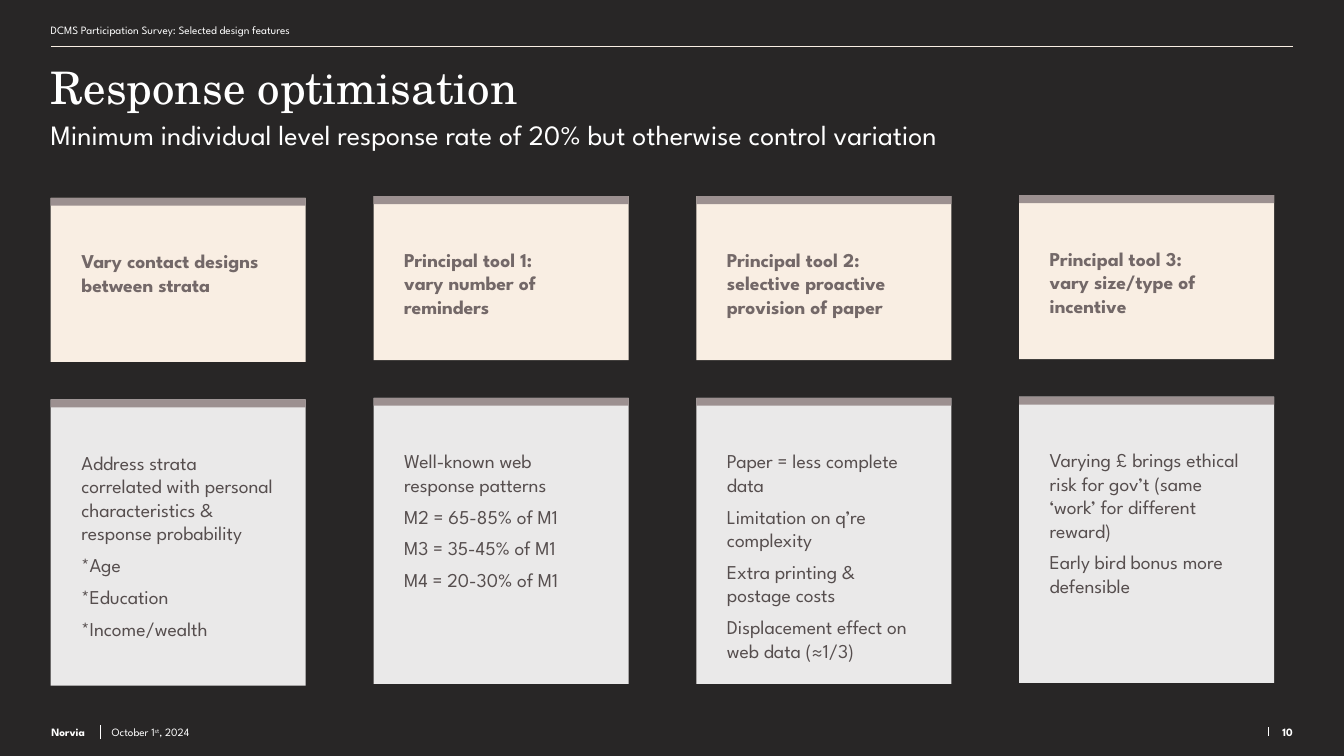
from lxml import etree
from pptx import Presentation
from pptx.dml.color import RGBColor
from pptx.enum.shapes import MSO_CONNECTOR, MSO_SHAPE
from pptx.enum.text import MSO_ANCHOR, PP_ALIGN
from pptx.oxml.ns import qn
from pptx.util import Cm, Pt

RECTANGLE = MSO_SHAPE.RECTANGLE
STRAIGHT = MSO_CONNECTOR.STRAIGHT
TOP, MIDDLE, BOTTOM = MSO_ANCHOR.TOP, MSO_ANCHOR.MIDDLE, MSO_ANCHOR.BOTTOM
LEFT, RIGHT = PP_ALIGN.LEFT, PP_ALIGN.RIGHT

CHARCOAL = RGBColor(0x28, 0x26, 0x26)
WHITE = RGBColor(0xFF, 0xFF, 0xFF)
CREAM = RGBColor(0xF9, 0xEE, 0xE3)
PALE_GREY = RGBColor(0xEA, 0xE9, 0xE9)
TAUPE = RGBColor(0x9C, 0x90, 0x90)
HEADING_BROWN = RGBColor(0x73, 0x68, 0x68)
BODY_BROWN = RGBColor(0x56, 0x4E, 0x4E)

SANS = "League Spartan"
SERIF = "TeX Gyre Schola"

MARGIN = 0.96
CONTENT_WIDTH = 23.47
FOOTER_TOP, FOOTER_HEIGHT = 13.64, 0.33
COLUMN_PITCH, CARD_WIDTH = 6.1, 4.82
HEADING_HEIGHT, BODY_HEIGHT, BAR_HEIGHT = 3.1, 5.41, 0.15
BODY_OFFSET = 3.81
CARD_INSETS = (0.58, 0.97, 0.58, 0.58)

# Top edge, heading paragraphs, body paragraphs
COLUMNS = [
    (3.74, ["Vary contact designs between strata"],
     ["Address strata correlated with personal characteristics & response probability",
      "*Age", "*Education", "*Income/wealth"]),
    (3.71, ["Principal tool 1:", "vary number of reminders"],
     ["Well-known web response patterns",
      "M2 = 65-85% of M1", "M3 = 35-45% of M1", "M4 = 20-30% of M1"]),
    (3.71, ["Principal tool 2:", "selective proactive provision of paper"],
     ["Paper = less complete data", "Limitation on q’re complexity",
      "Extra printing & postage costs", "Displacement effect on web data (≈1/3)"]),
    (3.69, ["Principal tool 3:", "vary size/type of incentive"],
     ["Varying £ brings ethical risk for gov’t (same ‘work’ for different reward)",
      "Early bird bonus more defensible"]),
]


class SlideBuilder:
    def __init__(self, slide):
        self.slide = slide
        slide.background.fill.solid()
        slide.background.fill.fore_color.rgb = CHARCOAL

    def set_text(self, shape, paragraphs, size, color=WHITE, font=SANS, bold=False,
                 anchor=TOP, align=LEFT, insets=(0, 0, 0, 0), space_after=0):
        """Fill a shape; each paragraph is a list of (text, is_superscript) runs."""
        frame = shape.text_frame
        frame.word_wrap = True
        frame.vertical_anchor = anchor
        (frame.margin_left, frame.margin_top,
         frame.margin_right, frame.margin_bottom) = map(Cm, insets)
        for index, runs in enumerate(paragraphs):
            paragraph = frame.add_paragraph() if index else frame.paragraphs[0]
            paragraph.alignment = align
            paragraph.space_after = Pt(space_after)
            for text, superscript in runs:
                run = paragraph.add_run()
                run.text = text
                run.font.name = font
                run.font.size = Pt(size)
                run.font.bold = bold
                run.font.color.rgb = color
                if superscript:
                    run.font._element.set("baseline", "30000")

    def text(self, left, top, width, height, runs, size, **style):
        box = self.slide.shapes.add_textbox(Cm(left), Cm(top), Cm(width), Cm(height))
        self.set_text(box, [runs], size, **style)

    def line(self, x1, y1, x2, y2, color):
        rule = self.slide.shapes.add_connector(STRAIGHT, Cm(x1), Cm(y1), Cm(x2), Cm(y2))
        rule.line.color.rgb = color
        rule.line.width = Pt(0.5)
        etree.SubElement(rule._element.spPr, qn("a:effectLst"))

    def block(self, group, left, top, height, color):
        rectangle = group.shapes.add_shape(
            RECTANGLE, Cm(left), Cm(top), Cm(CARD_WIDTH), Cm(height))
        rectangle.shadow.inherit = False
        rectangle.fill.solid()
        rectangle.fill.fore_color.rgb = color
        rectangle.line.fill.background()
        return rectangle

    def card(self, left, top, height, fill, paragraphs, **style):
        """Add a text panel grouped with the bar along its top edge."""
        group = self.slide.shapes.add_group_shape()
        panel = self.block(group, left, top, height, fill)
        self.set_text(panel, [[(text, False)] for text in paragraphs], 10.5,
                      insets=CARD_INSETS, **style)
        self.block(group, left, top, BAR_HEIGHT, TAUPE)


def main():
    presentation = Presentation()
    presentation.slide_width = Cm(25.4)
    presentation.slide_height = Cm(14.29)
    builder = SlideBuilder(presentation.slides.add_slide(presentation.slide_layouts[6]))

    builder.line(MARGIN, 0.87, MARGIN + CONTENT_WIDTH, 0.87, CREAM)
    builder.text(MARGIN, 0.36, CONTENT_WIDTH, 0.41,
                 [("DCMS Participation Survey: Selected design features", False)], 6,
                 anchor=MIDDLE, insets=(0, 0.1, 0, 0.1), space_after=4.5)
    builder.text(MARGIN, 0.87, CONTENT_WIDTH, 1.35, [("Response optimisation", False)], 24,
                 font=SERIF, insets=(0, 0.25, 0, 0))
    builder.text(MARGIN, 2.22, 20.37, 0.89,
                 [("Minimum individual level response rate of 20% "
                   "but otherwise control variation", False)], 15)

    for index, (top, heading, body) in enumerate(COLUMNS):
        left = MARGIN + index * COLUMN_PITCH
        builder.card(left, top, HEADING_HEIGHT, CREAM, heading,
                     color=HEADING_BROWN, bold=True)
        builder.card(left, top + BODY_OFFSET, BODY_HEIGHT, PALE_GREY, body,
                     color=BODY_BROWN, space_after=4.5)

    builder.text(0.97, FOOTER_TOP, 0.94, FOOTER_HEIGHT, [("Norvia", False)], 6,
                 bold=True, anchor=BOTTOM)
    builder.line(1.9, 13.97, 1.9, 13.7, WHITE)
    builder.text(2.11, FOOTER_TOP, 14.86, FOOTER_HEIGHT,
                 [("October 1", False), ("st", True), (", 2024", False)], 6, anchor=BOTTOM)
    builder.line(23.97, 13.75, 23.97, 13.92, WHITE)
    builder.text(23.97, FOOTER_TOP, 0.46, FOOTER_HEIGHT, [("10", False)], 6,
                 bold=True, anchor=BOTTOM, align=RIGHT)

    presentation.save("out.pptx")


if __name__ == "__main__":
    main()
